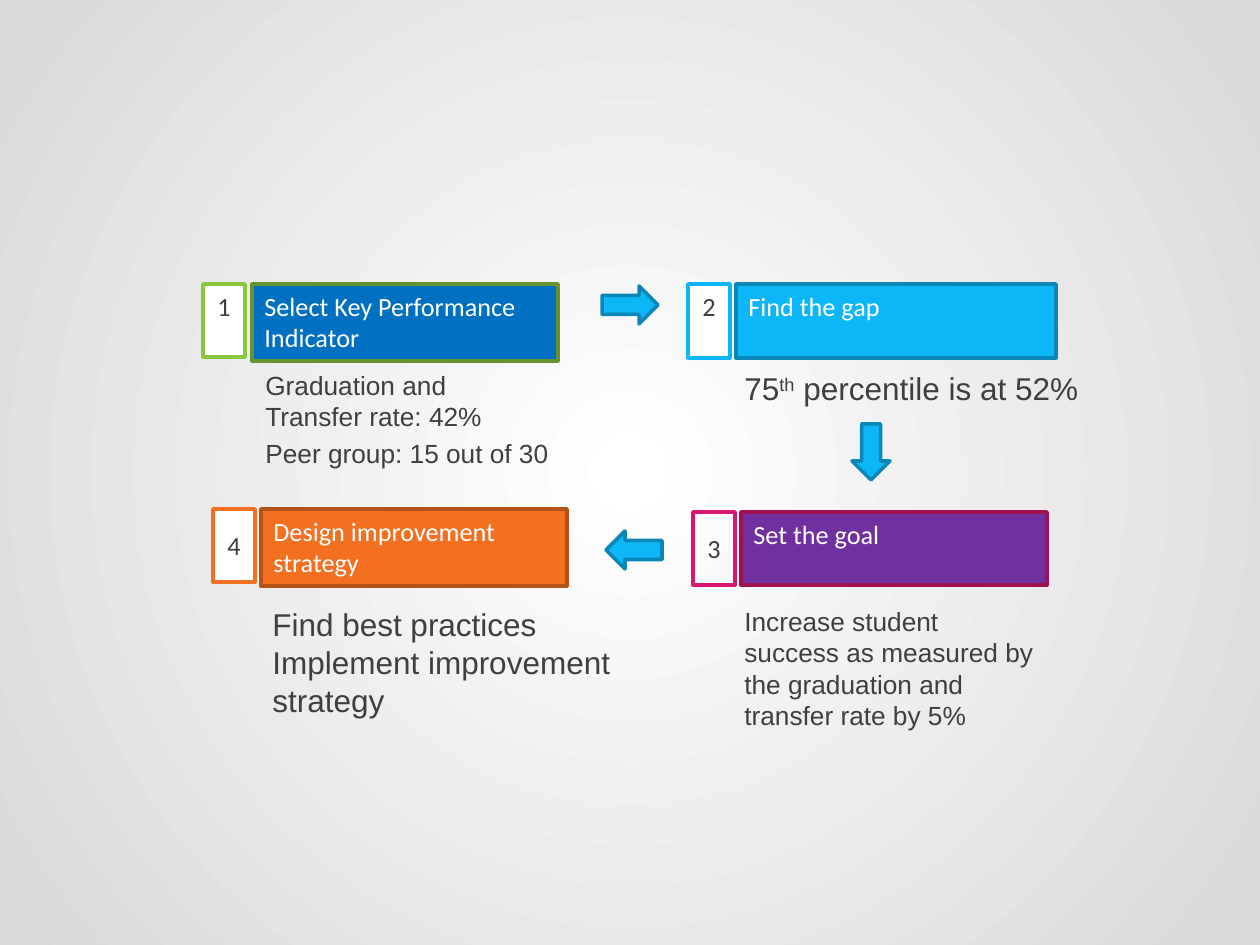
from lxml.etree import SubElement
from pptx import Presentation
from pptx.dml.color import RGBColor
from pptx.enum.shapes import MSO_SHAPE
from pptx.enum.text import MSO_ANCHOR, PP_ALIGN
from pptx.oxml.ns import qn
from pptx.util import Emu, Inches, Pt

PX_PER_INCH = 126
WHITE, GRAY, DARK = "FFFFFF", "D9D9D9", "3F3F3F"
SKY, SKY_EDGE = "0DB6F6", "0A87B6"

# number, badge place, badge edge, badge fill, badge anchor,
# heading, heading place, heading fill, heading edge
STEPS = [
    ("1", (203, 284, 42, 73), "8CC63F", WHITE, MSO_ANCHOR.TOP,
     "Select Key Performance Indicator", (252, 284, 306, 77), "0070C0", "68922F"),
    ("2", (688, 284, 42, 74), SKY, WHITE, MSO_ANCHOR.TOP,
     "Find the gap", (736, 284, 320, 74), SKY, SKY_EDGE),
    ("3", (693, 512, 42, 73), "D9176E", None, MSO_ANCHOR.MIDDLE,
     "Set the goal", (741, 512, 306, 73), "7030A0", "A11151"),
    ("4", (213, 509, 42, 73), "F37021", WHITE, MSO_ANCHOR.MIDDLE,
     "Design improvement strategy", (261, 509, 306, 77), "F37021", "B45318"),
]
# place, rotation
ARROWS = [((602, 286, 56, 38), 0), ((843, 433, 56, 38), 90), ((606, 531, 56, 38), 180)]
# place, size, wraps, paragraphs as lists of (text, is superscript)
NOTES = [
    ((253, 363, 312, 77), 15, True, [[("Graduation and \vTransfer rate: 42%", False)]]),
    ((253, 431, 311, 44), 15, False, [[("Peer group: 15 out of 30", False)]]),
    ((732, 363, 364, 50), 18, False,
     [[("75", False), ("th", True), (" percentile is at 52%", False)]]),
    ((732, 599, 315, 140), 15, True,
     [[("Increase student success as measured by the graduation and "
        "transfer rate by 5%", False)]]),
    ((260, 599, 367, 127), 18, False,
     [[("Find best practices", False)],
      [("Implement improvement\vstrategy", False)]]),
]


def px(length):
    return Emu(round(length * Inches(1) / PX_PER_INCH))


def color(value):
    return RGBColor.from_string(value)


class SlideBuilder:
    def __init__(self, slide):
        self.slide = slide
        self.heading_font = "Calibri"
        self.note_font = "Arial"
        self.heading_size = 15
        self.line_width = Pt(2)

    def radial_background(self, center, edge):
        fill = self.slide.background.fill
        fill.gradient()
        for stop, value, position in zip(fill.gradient_stops, (center, edge), (0, 1)):
            stop.color.rgb = color(value)
            stop.position = position
        linear = self.slide.element.find(".//" + qn("a:lin"))
        gradient = linear.getparent()
        gradient.remove(linear)
        circle = SubElement(gradient, qn("a:path"), path="circle")
        SubElement(circle, qn("a:fillToRect"), dict.fromkeys("ltrb", "50000"))

    def style_font(self, font, name, size, value):
        font.name = name
        font.size = Pt(size)
        font.color.rgb = color(value)

    def shape(self, kind, place, fill, edge):
        shape = self.slide.shapes.add_shape(kind, *map(px, place))
        shape.shadow.inherit = False
        if fill:
            shape.fill.solid()
            shape.fill.fore_color.rgb = color(fill)
        else:
            shape.fill.background()
        shape.line.color.rgb = color(edge)
        shape.line.width = self.line_width
        return shape

    def box(self, text, place, fill, edge, text_color, align, anchor):
        frame = self.shape(MSO_SHAPE.RECTANGLE, place, fill, edge).text_frame
        frame.text = text
        frame.word_wrap = True
        frame.vertical_anchor = anchor
        paragraph = frame.paragraphs[0]
        paragraph.alignment = align
        for run in paragraph.runs:
            self.style_font(run.font, self.heading_font, self.heading_size, text_color)

    def step(self, number, badge_place, badge_edge, badge_fill, badge_anchor,
             heading, heading_place, heading_fill, heading_edge):
        self.box(number, badge_place, badge_fill, badge_edge,
                 DARK, PP_ALIGN.CENTER, badge_anchor)
        self.box(heading, heading_place, heading_fill, heading_edge,
                 WHITE, PP_ALIGN.LEFT, MSO_ANCHOR.TOP)

    def arrow(self, place, rotation):
        self.shape(MSO_SHAPE.RIGHT_ARROW, place, SKY, SKY_EDGE).rotation = rotation

    def note(self, place, size, wraps, paragraphs):
        frame = self.slide.shapes.add_textbox(*map(px, place)).text_frame
        frame.word_wrap = wraps
        frame.text = "\n".join("".join(text for text, _ in parts) for parts in paragraphs)
        for paragraph, parts in zip(frame.paragraphs, paragraphs):
            if len(parts) > 1:
                paragraph.clear()
                for text, superscript in parts:
                    run = paragraph.add_run()
                    run.text = text
                    if superscript:
                        run._r.get_or_add_rPr().set("baseline", "30000")
            for run in paragraph.runs:
                self.style_font(run.font, self.note_font, size, DARK)


def main():
    presentation = Presentation()
    presentation.slide_width = Inches(10)
    presentation.slide_height = Inches(7.5)
    blank_layout = presentation.slide_layouts[6]
    builder = SlideBuilder(presentation.slides.add_slide(blank_layout))
    builder.radial_background(WHITE, GRAY)
    for step in STEPS:
        builder.step(*step)
    for arrow in ARROWS:
        builder.arrow(*arrow)
    for note in NOTES:
        builder.note(*note)
    presentation.save("out.pptx")


if __name__ == "__main__":
    main()
